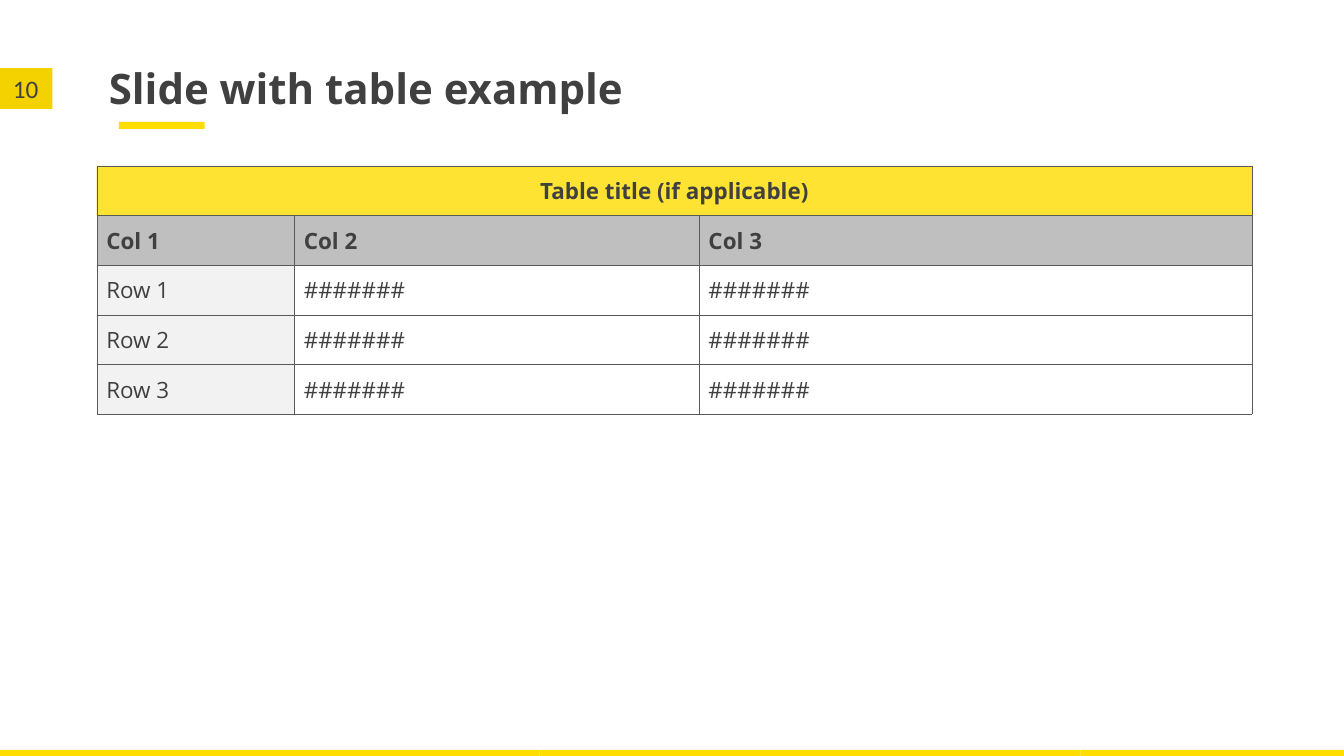
import pptx
import pptx.dml.color
import pptx.enum.shapes
import pptx.enum.text
import pptx.oxml
import pptx.oxml.ns
import pptx.util

Pt = pptx.util.Pt
Align = pptx.enum.text.PP_ALIGN
Anchor = pptx.enum.text.MSO_ANCHOR
Shape = pptx.enum.shapes.MSO_SHAPE


def color(hex_string):
    return pptx.dml.color.RGBColor.from_string(hex_string)


class TableSlide:
    """Hold the slide style and draw each kind of element on the slide."""

    font = "Open Sans"
    number_font = "Calibri"
    ink = "404040"
    yellow = "FFDD00"
    dark_yellow = "F3D200"
    header_gray = "BFBFBF"
    label_gray = "F2F2F2"
    white = "FFFFFF"
    border = "595959"
    cell_margin = 13.7

    def __init__(self, presentation):
        self.slide = presentation.slides.add_slide(presentation.slide_layouts[6])

    def bar(self, left, top, width, height, fill, kind=Shape.RECTANGLE):
        shape = self.slide.shapes.add_shape(kind, Pt(left), Pt(top), Pt(width), Pt(height))
        shape.shadow.inherit = False
        shape.fill.solid()
        shape.fill.fore_color.rgb = color(fill)
        shape.line.fill.background()
        return shape

    def set_text(self, text_frame, text, size, font, bold=False, align=Align.LEFT):
        text_frame.text = text
        paragraph = text_frame.paragraphs[0]
        paragraph.alignment = align
        run_font = paragraph.runs[0].font
        run_font.name = font
        run_font.size = Pt(size)
        run_font.bold = bold
        run_font.color.rgb = color(self.ink)

    def text(self, left, top, width, height, text, size, font,
             bold=False, align=Align.LEFT, margins=(7.2, 3.6)):
        box = self.slide.shapes.add_textbox(Pt(left), Pt(top), Pt(width), Pt(height))
        frame = box.text_frame
        frame.word_wrap = True
        frame.margin_left = frame.margin_right = Pt(margins[0])
        frame.margin_top = frame.margin_bottom = Pt(margins[1])
        self.set_text(frame, text, size, font, bold, align)

    def cell(self, cell, text, fill=None, bold=False, align=Align.LEFT, opacity=100):
        cell.margin_left = cell.margin_right = Pt(self.cell_margin)
        cell.margin_top = cell.margin_bottom = Pt(self.cell_margin)
        if text:
            self.set_text(cell.text_frame, text, 32, self.font, bold, align)
        if fill:
            cell.fill.solid()
            cell.fill.fore_color.rgb = color(fill)
        else:
            cell.fill.background()
        properties = cell._tc.get_or_add_tcPr()
        if opacity < 100:
            tint = properties.find(".//" + pptx.oxml.ns.qn("a:srgbClr"))
            tint.append(pptx.oxml.parse_xml(
                f'<a:alpha {pptx.oxml.ns.nsdecls("a")} val="{opacity * 1000}"/>'))
        for index, side in enumerate("LRTB"):
            properties.insert(index, pptx.oxml.parse_xml(
                f'<a:ln{side} {pptx.oxml.ns.nsdecls("a")} w="{Pt(0.5)}"><a:solidFill>'
                f'<a:srgbClr val="{self.border}"/></a:solidFill></a:ln{side}>'))

    def table(self, left, top, widths, row_height, title, headers, rows):
        row_count = len(rows) + 2
        table = self.slide.shapes.add_table(
            row_count, len(widths), Pt(left), Pt(top),
            Pt(sum(widths)), Pt(row_height * row_count)).table
        for column, width in zip(table.columns, widths):
            column.width = Pt(width)
        for row in table.rows:
            row.height = Pt(row_height)
        last = len(widths) - 1
        table.cell(0, 0).merge(table.cell(0, last))
        for index, header in enumerate(headers):
            self.cell(table.cell(0, index), "" if index else title,
                      self.yellow, True, Align.CENTER, 80)
            self.cell(table.cell(1, index), header, self.header_gray, True)
        table.cell(0, 0).vertical_anchor = Anchor.MIDDLE
        for row_index, values in enumerate(rows, 2):
            body_fill = None if row_index == 2 else self.white
            for index, value in enumerate(values):
                fill = body_fill if index else self.label_gray
                self.cell(table.cell(row_index, index), value, fill)


def main():
    presentation = pptx.Presentation()
    presentation.slide_width = Pt(1920.24)
    presentation.slide_height = Pt(1080)
    page = TableSlide(presentation)

    number_tab = page.bar(0, 97.2, 74.9, 58.3, page.dark_yellow, Shape.ROUNDED_RECTANGLE)
    number_tab.adjustments[0] = 0
    footer_width = 386.5
    for index in range(5):
        page.bar(-2 + index * footer_width, 1071.4, footer_width, 14.4, page.yellow)
    page.text(-2, 100.8, 77, 51.1, "10", 36, page.number_font, align=Align.CENTER)
    page.bar(169.9, 174.2, 122.4, 10.1, page.yellow)
    page.text(138.2, 80.5, 1676, 116.6, "Slide with table example", 60, page.font,
              bold=True, margins=(17.3, 8.6))
    page.table(138.2, 236.9, [282.2, 578.2, 790.6], 71, "Table title (if applicable)",
               [f"Col {number}" for number in range(1, 4)],
               [[f"Row {number}", "#######", "#######"] for number in range(1, 4)])

    presentation.save("out.pptx")


if __name__ == "__main__":
    main()
